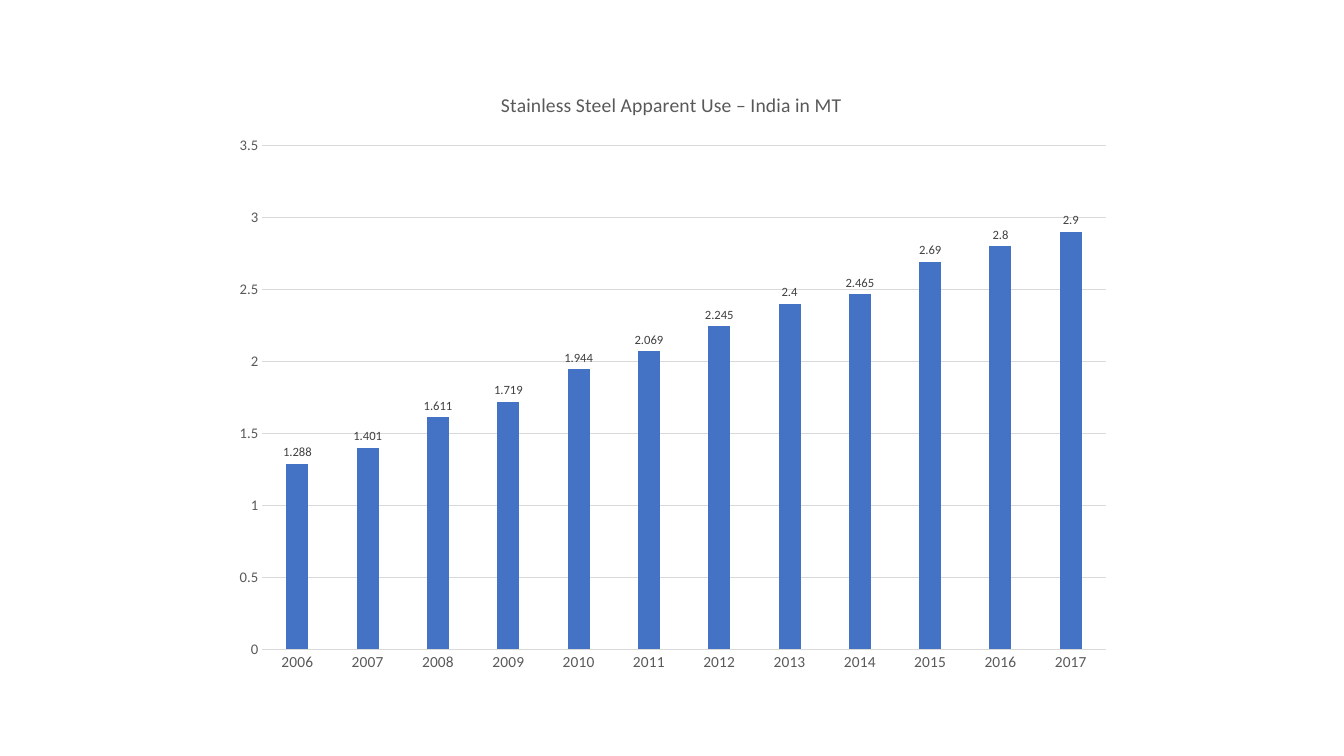
from dataclasses import dataclass

from lxml import etree
from pptx import Presentation
from pptx.chart.data import CategoryChartData
from pptx.dml.color import RGBColor
from pptx.enum.chart import XL_CHART_TYPE as Kind, XL_LABEL_POSITION as LabelPos
from pptx.enum.chart import XL_TICK_MARK as Tick
from pptx.oxml.ns import qn
from pptx.util import Inches, Pt


@dataclass
class Year:
    name: str
    use: float


USE = (1.288, 1.401, 1.611, 1.719, 1.944, 2.069,
       2.245, 2.4, 2.465, 2.69, 2.8, 2.9)
YEARS = [Year(str(y), use) for y, use in enumerate(USE, 2006)]
TITLE = "Stainless Steel Apparent Use – India in MT"
GREY, RULE, BLUE = "595959", "D9D9D9", "4472C4"
PLOT_AREA = {"x": 0.046, "y": 0.122, "w": 0.936, "h": 0.821}


def rgb(color: str) -> RGBColor:
    return RGBColor.from_string(color)


def set_font(font, size: float, color: str) -> None:
    fmt = {"name": "Calibri", "size": Pt(size), "bold": False}
    for key, value in fmt.items():
        setattr(font, key, value)
    font.color.rgb = rgb(color)


def set_line(line) -> None:
    line.color.rgb = rgb(RULE)
    line.width = Pt(0.75)


def style_axis(axis, size: float, fmt: dict) -> None:
    for key, value in fmt.items():
        setattr(axis, key, value)
    axis.major_tick_mark = axis.minor_tick_mark = Tick.NONE
    set_font(axis.tick_labels.font, size, GREY)


def place_plot(chart) -> None:
    area = chart._chartSpace.chart.plotArea
    for old in area.findall(qn("c:layout")):
        area.remove(old)
    layout = etree.Element(qn("c:layout"))
    manual = etree.SubElement(layout, qn("c:manualLayout"))
    modes = {"layoutTarget": "inner", "xMode": "edge", "yMode": "edge"}
    for tag, value in {**modes, **PLOT_AREA}.items():
        etree.SubElement(manual, qn(f"c:{tag}")).set("val", str(value))
    area.insert(0, layout)


def add_use_chart(s, years: list[Year]) -> None:
    data = CategoryChartData()
    data.categories = [year.name for year in years]
    data.add_series("Series 1", [year.use for year in years])
    chart = s.shapes.add_chart(
        Kind.COLUMN_CLUSTERED, Inches(2.19), Inches(0.7),
        Inches(8.94), Inches(6.09), data).chart
    set_font(chart.font, 10, "000000")
    chart.has_legend = False

    tf = chart.chart_title.text_frame
    tf.text = TITLE
    set_font(tf.paragraphs[0].runs[0].font, 14, GREY)
    chart.chart_title.include_in_layout = False

    style_axis(chart.category_axis, 11, {"has_major_gridlines": False})
    set_line(chart.category_axis.format.line)
    style_axis(chart.value_axis, 10.5, {
        "has_major_gridlines": True, "minimum_scale": 0,
        "maximum_scale": 3.5, "major_unit": 0.5})
    chart.value_axis.format.line.fill.background()
    set_line(chart.value_axis.major_gridlines.format.line)

    plot = chart.plots[0]
    for key, value in {"gap_width": 219, "overlap": -27,
                       "vary_by_categories": False}.items():
        setattr(plot, key, value)
    series = plot.series[0]
    series.format.fill.solid()
    series.format.fill.fore_color.rgb = rgb(BLUE)
    labels = series.data_labels
    labels.show_value = True
    labels.position = LabelPos.OUTSIDE_END
    set_font(labels.font, 9, "404040")
    place_plot(chart)


def main() -> None:
    prs = Presentation()
    prs.slide_width, prs.slide_height = Inches(13.33), Inches(7.5)
    s = prs.slides.add_slide(prs.slide_layouts[6])
    add_use_chart(s, YEARS)
    prs.save("out.pptx")


if __name__ == "__main__":
    main()
